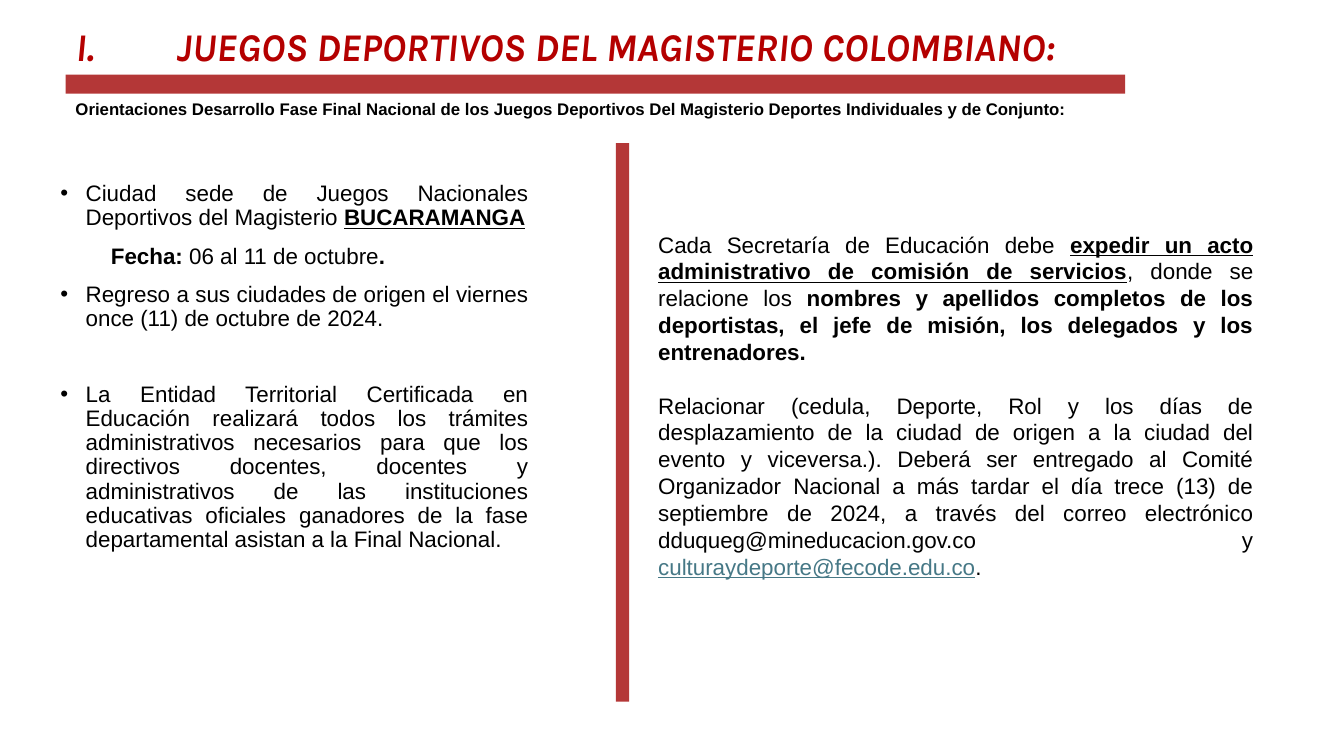
import dataclasses

import pptx
import pptx.dml.color
import pptx.enum.shapes
import pptx.enum.text
import pptx.oxml.ns
import pptx.util
from lxml import etree

Inches = pptx.util.Inches
Pt = pptx.util.Pt
ALIGN = pptx.enum.text.PP_ALIGN


@dataclasses.dataclass(frozen=True)
class Theme:
    """Colours, fonts and type sizes of the slide."""
    title_color: str = "B40000"
    bar_color: str = "B43737"
    text_color: str = "000000"
    link_color: str = "467886"
    title_font: str = "Karla"
    text_font: str = "Arial"
    title_size: int = 28
    subtitle_size: int = 12
    body_size: int = 16


THEME = Theme()

TITLE = "I.\tJUEGOS DEPORTIVOS DEL MAGISTERIO COLOMBIANO:"
SUBTITLE = ("Orientaciones Desarrollo Fase Final Nacional de los Juegos Deportivos "
            "Del Magisterio Deportes Individuales y de Conjunto:")

LEFT_ITEMS = [
    (True, 0, [("Ciudad sede de Juegos Nacionales Deportivos del Magisterio ", ""),
               ("BUCARAMANGA", "bu")]),
    (False, 10, [("\tFecha: ", "b"), ("06 al 11 de octubre", ""), (".", "b")]),
    (True, 10, [("Regreso a sus ciudades de origen el viernes once (11) de octubre "
                 "de 2024.", "")]),
    (True, 37, [("La Entidad Territorial Certificada en Educación realizará todos los "
                 "trámites administrativos necesarios para que los directivos docentes, "
                 "docentes y administrativos de las instituciones educativas oficiales "
                 "ganadores de la fase departamental asistan a la Final Nacional.", "")]),
]

RIGHT_PARAGRAPHS = [
    (0, [("Cada Secretaría de Educación debe ", ""),
         ("expedir un acto administrativo de comisión de servicios", "bu"),
         (", donde se relacione los ", ""),
         ("nombres y apellidos completos de los deportistas, el jefe de misión, "
          "los delegados y los entrenadores.", "b")]),
    (19, [("Relacionar (cedula, Deporte, Rol y los días de desplazamiento de la ciudad "
           "de origen a la ciudad del evento y viceversa.). Deberá ser entregado al "
           "Comité Organizador Nacional a más tardar el día trece (13) de septiembre de "
           "2024, a través del correo electrónico dduqueg@mineducacion.gov.co y ", ""),
          ("culturaydeporte@fecode.edu.co", "lu"), (".", "")]),
]


def style_run(r, font, size, color, bold=False, italic=False, underline=False):
    """Format one run."""
    r.font.name = font
    r.font.size = Pt(size)
    r.font.bold = bold
    r.font.italic = italic
    r.font.underline = underline
    r.font.color.rgb = pptx.dml.color.RGBColor.from_string(color)


def set_frame(tf):
    """Make a text frame wrap, start at the top and keep its size."""
    tf.word_wrap = True
    tf.auto_size = pptx.enum.text.MSO_AUTO_SIZE.NONE
    tf.vertical_anchor = pptx.enum.text.MSO_ANCHOR.TOP


def place(sp, left, top, width, height):
    """Move and size a shape, in inches."""
    sp.left, sp.top = Inches(left), Inches(top)
    sp.width, sp.height = Inches(width), Inches(height)


def set_bullet(p, bullet):
    """Give a paragraph a hanging bullet, or none."""
    pPr = p._p.get_or_add_pPr()
    indent = Inches(0.25) if bullet else 0
    pPr.set("marL", str(indent))
    pPr.set("indent", str(-indent))
    if bullet:
        etree.SubElement(pPr, pptx.oxml.ns.qn("a:buChar"), char="•")
    else:
        etree.SubElement(pPr, pptx.oxml.ns.qn("a:buNone"))


def add_tab(p, position):
    """Add a left tab stop, in inches."""
    tabs = etree.SubElement(p._p.get_or_add_pPr(), pptx.oxml.ns.qn("a:tabLst"))
    etree.SubElement(tabs, pptx.oxml.ns.qn("a:tab"), pos=str(Inches(position)), algn="l")


def fill_paragraph(p, runs, space_before, line_spacing):
    """Write justified runs; flags are b bold, u underlined, l link colour."""
    p.alignment = ALIGN.JUSTIFY
    p.space_before = Pt(space_before)
    p.line_spacing = line_spacing
    for text, flags in runs:
        r = p.add_run()
        r.text = text
        color = THEME.link_color if "l" in flags else THEME.text_color
        style_run(r, THEME.text_font, THEME.body_size, color,
                  bold="b" in flags, underline="u" in flags)


def next_paragraph(tf, index):
    """Return the first paragraph of a frame, or a new one."""
    return tf.add_paragraph() if index else tf.paragraphs[0]


def add_bar(s, left, top, width, height):
    """Add a plain red bar."""
    sp = s.shapes.add_shape(pptx.enum.shapes.MSO_SHAPE.RECTANGLE, Inches(left),
                            Inches(top), Inches(width), Inches(height))
    sp.shadow.inherit = False
    sp.fill.solid()
    sp.fill.fore_color.rgb = pptx.dml.color.RGBColor.from_string(THEME.bar_color)
    sp.line.fill.background()


def add_text_box(s, left, top, width, height):
    """Add a wrapping text box and return its frame."""
    sp = s.shapes.add_textbox(Inches(left), Inches(top), Inches(width), Inches(height))
    set_frame(sp.text_frame)
    return sp.text_frame


def fill_title(sp):
    """Place and write the slide title."""
    place(sp, 0.65, 0.17, 11.56, 0.57)
    tf = sp.text_frame
    set_frame(tf)
    tf.text = TITLE
    p = tf.paragraphs[0]
    add_tab(p, 1)
    p.alignment = ALIGN.LEFT
    style_run(p.runs[0], THEME.title_font, THEME.title_size, THEME.title_color,
              bold=True, italic=True)


def add_subtitle(s):
    """Add the bold line under the title bar."""
    tf = add_text_box(s, 0.65, 0.93, 10.19, 0.3)
    tf.text = SUBTITLE
    style_run(tf.paragraphs[0].runs[0], THEME.text_font, THEME.subtitle_size,
              THEME.text_color, bold=True)


def fill_list(sp):
    """Place and write the bulleted list on the left."""
    place(sp, 0.5, 1.76, 4.84, 4.56)
    set_frame(sp.text_frame)
    for i, (bullet, space_before, runs) in enumerate(LEFT_ITEMS):
        p = next_paragraph(sp.text_frame, i)
        set_bullet(p, bullet)
        if not bullet:
            add_tab(p, 1)
        fill_paragraph(p, runs, space_before, 0.9)


def add_right_column(s):
    """Add the paragraphs on the right."""
    tf = add_text_box(s, 6.43, 2.24, 6.1, 4.14)
    for i, (space_before, runs) in enumerate(RIGHT_PARAGRAPHS):
        fill_paragraph(next_paragraph(tf, i), runs, space_before, 1.0)


def main():
    """Build the slide and save it."""
    prs = pptx.Presentation()
    prs.slide_width, prs.slide_height = Inches(13.33), Inches(7.5)
    s = prs.slides.add_slide(prs.slide_layouts[1])
    fill_title(s.shapes.title)
    add_bar(s, 0.65, 0.74, 10.51, 0.19)
    add_subtitle(s)
    fill_list(s.placeholders[1])
    add_right_column(s)
    add_bar(s, 6.11, 1.42, 0.13, 5.54)
    prs.save("out.pptx")


if __name__ == "__main__":
    main()
